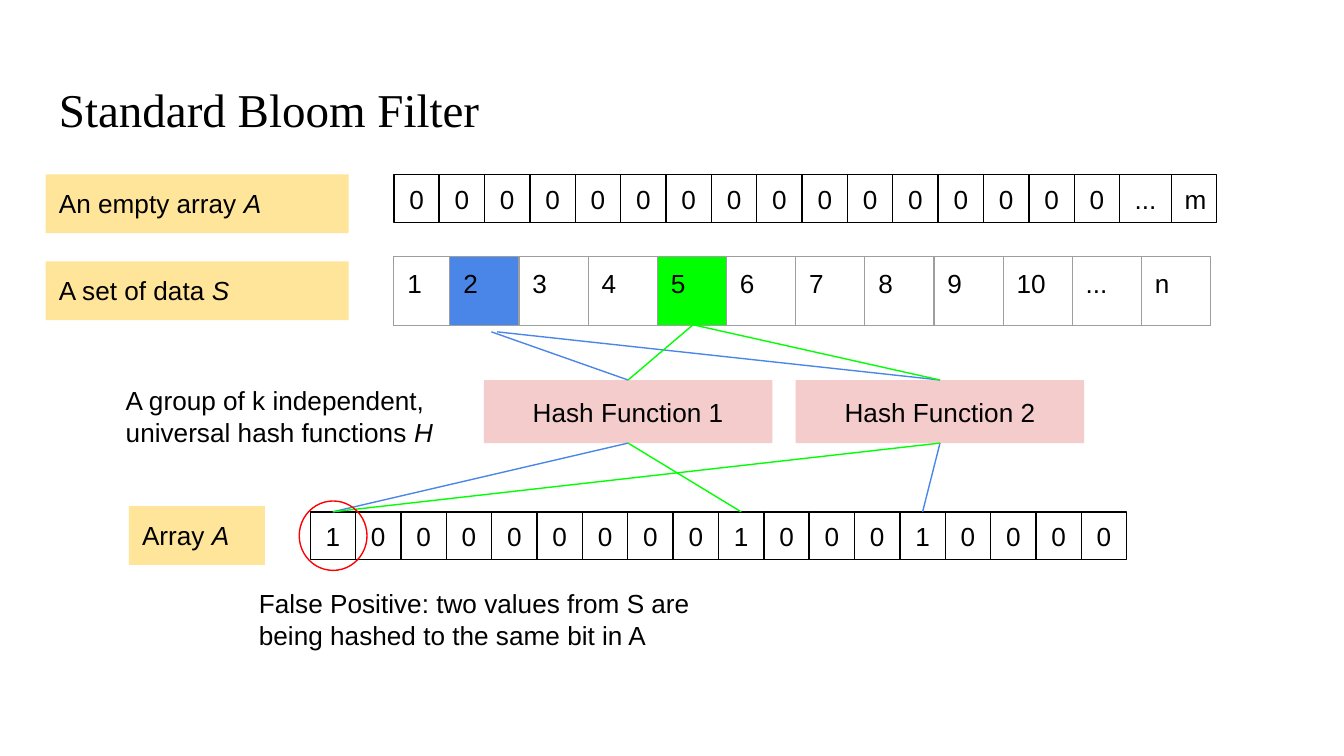
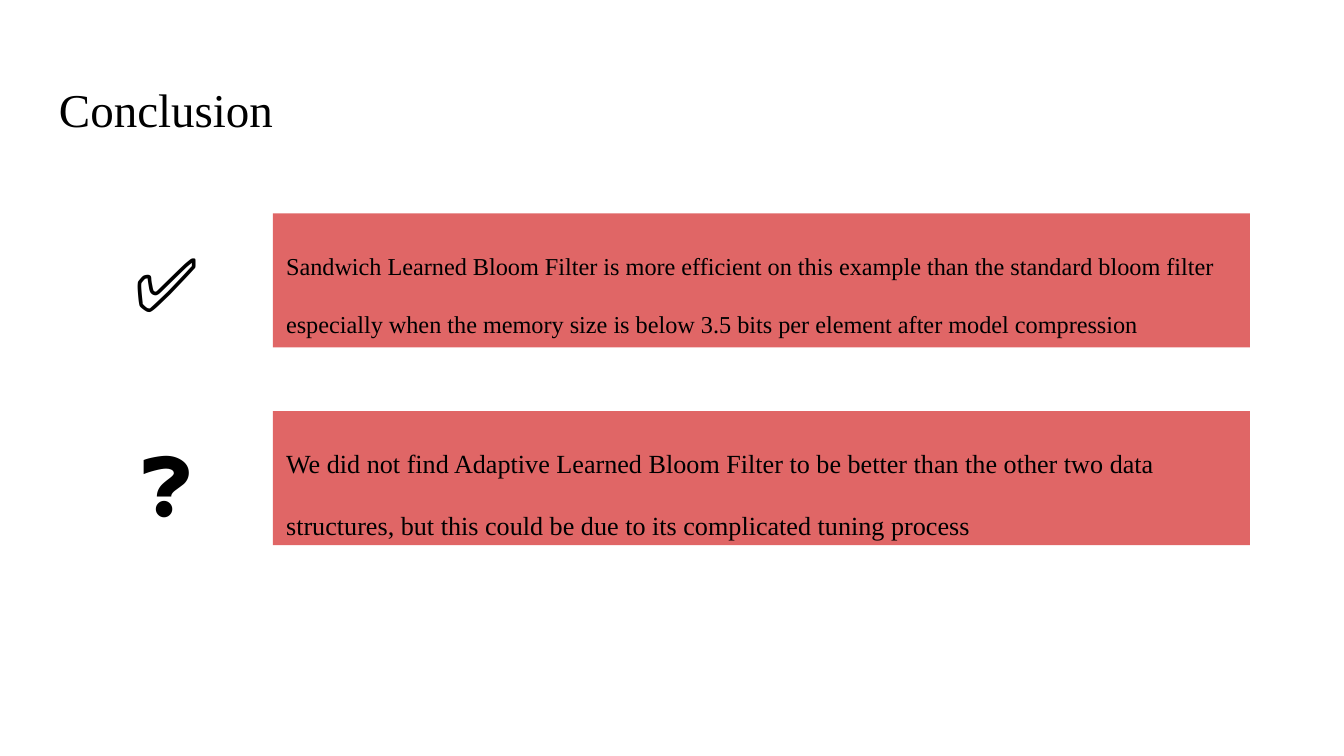
from dataclasses import dataclass
from typing import NamedTuple

from lxml.etree import SubElement
from pptx import Presentation
from pptx.dml.color import RGBColor
from pptx.enum.shapes import MSO_CONNECTOR, MSO_SHAPE
from pptx.enum.text import MSO_ANCHOR, MSO_AUTO_SIZE, PP_ALIGN
from pptx.oxml.ns import qn
from pptx.util import Pt

BLACK, GREY, RED = "000000", "9E9E9E", "FF0000"
BLUE, GREEN = "4A86E8", "00FF00"
YELLOW, PINK, CORAL = "FFE599", "F4CCCC", "E06666"
SANS, SERIF = "Arial", "Times New Roman"
LINE_WIDTH = 0.75
INSET = 7.2
LEFT = 24.5
BIT_W, BIT_H = 24.3, 25.7
TOP_BOTTOM = 0, 2


@dataclass
class Box:
    """A rectangular area with optional fill and outline, in points."""
    x: float
    y: float
    w: float
    h: float
    fill: str | None = None
    line: str | None = None
    preset: MSO_SHAPE | None = MSO_SHAPE.RECTANGLE


@dataclass
class Label:
    """A left-aligned note whose last word may be italic."""
    box: Box
    text: str
    symbol: str = ""


@dataclass
class Finding:
    """One conclusion with its icon."""
    y: float
    icon: str
    text: str
    size: float
    after: float = 0


class Point(NamedTuple):
    """A free line end, in points."""
    x: float
    y: float


class Site(NamedTuple):
    """A line end joined to a shape."""
    shape: object
    index: int


def rgb(color: str) -> RGBColor:
    """Turn a hex string into a colour."""
    return RGBColor.from_string(color)


def write(tf, text: str, *, italic: str = "", size: float = 14, font: str = SANS,
          color: str = BLACK, align=PP_ALIGN.LEFT, anchor=MSO_ANCHOR.TOP,
          spacing: float | None = None, after: float = 0, grow: bool = False) -> None:
    """Fill a text frame with one formatted paragraph."""
    tf.word_wrap = True
    tf.vertical_anchor = anchor
    tf.margin_left = tf.margin_right = tf.margin_top = tf.margin_bottom = Pt(INSET)
    if grow:
        tf.auto_size = MSO_AUTO_SIZE.SHAPE_TO_FIT_TEXT
    p = tf.paragraphs[0]
    p.alignment = align
    if spacing:
        p.line_spacing = spacing
    if after:
        p.space_after = Pt(after)
    for part, slanted in ((text, False), (italic, True)):
        if part:
            r = p.add_run()
            r.text = part
            r.font.size, r.font.name = Pt(size), font
            r.font.color.rgb = rgb(color)
            r.font.italic = slanted


def draw(s, box: Box):
    """Draw a box as a preset shape, or as a text box when it has no preset."""
    area = [Pt(v) for v in (box.x, box.y, box.w, box.h)]
    if box.preset is None:
        return s.shapes.add_textbox(*area)
    sp = s.shapes.add_shape(box.preset, *area)
    sp.shadow.inherit = False
    if box.fill:
        sp.fill.solid()
        sp.fill.fore_color.rgb = rgb(box.fill)
    else:
        sp.fill.background()
    if box.line:
        sp.line.color.rgb = rgb(box.line)
        sp.line.width = Pt(LINE_WIDTH)
    else:
        sp.line.fill.background()
    return sp


def add_title(prs, text: str):
    """Add a blank slide with a title."""
    s = prs.slides.add_slide(prs.slide_layouts[6])
    sp = draw(s, Box(LEFT, 35.3, 671, 45.4, preset=None))
    write(sp.text_frame, text, size=25.2, font=SERIF, anchor=MSO_ANCHOR.MIDDLE)
    return s


def add_centred(s, box: Box, text: str):
    """Draw a box with text in its centre."""
    sp = draw(s, box)
    write(sp.text_frame, text, align=PP_ALIGN.CENTER, anchor=MSO_ANCHOR.MIDDLE)
    return sp


def add_bits(s, x: float, y: float, bits: list[str]) -> list:
    """Draw a row of bit cells."""
    cells = []
    for bit in bits:
        w = 27.7 if bit == "..." else BIT_W
        cells.append(add_centred(s, Box(x, y, w, BIT_H, line=BLACK), bit))
        x += w
    return cells


def add_label(s, label: Label) -> None:
    """Draw a label that grows with its text."""
    sp = draw(s, label.box)
    write(sp.text_frame, label.text, italic=label.symbol, grow=True)


def add_border(cell) -> None:
    """Outline a table cell on all four sides."""
    tcPr = cell._tc.get_or_add_tcPr()
    for i, side in enumerate(("a:lnL", "a:lnR", "a:lnT", "a:lnB")):
        ln = tcPr.makeelement(qn(side), {"w": str(Pt(LINE_WIDTH))})
        SubElement(SubElement(ln, qn("a:solidFill")), qn("a:srgbClr"), val=GREY)
        tcPr.insert(i, ln)


def add_data_set(s, values: list[str], fills: dict[str, str]) -> None:
    """Draw the data set as a one-row table."""
    widths = [30] + [37.07] * (len(values) - 1)
    table = s.shapes.add_table(1, len(values), Pt(211), Pt(137.4),
                               Pt(sum(widths)), Pt(37)).table
    table.first_row = table.horz_banding = False
    for i, (value, width) in enumerate(zip(values, widths)):
        table.columns[i].width = Pt(width)
        cell = table.cell(0, i)
        if value in fills:
            cell.fill.solid()
            cell.fill.fore_color.rgb = rgb(fills[value])
        else:
            cell.fill.background()
        cell.margin_left = cell.margin_right = Pt(INSET)
        cell.margin_top = cell.margin_bottom = Pt(INSET)
        write(cell.text_frame, value)
        add_border(cell)


def add_link(s, start: Point | Site, end: Site, color: str) -> None:
    """Draw a straight line from a point or shape to a shape."""
    x, y = start if isinstance(start, Point) else (0, 0)
    cn = s.shapes.add_connector(MSO_CONNECTOR.STRAIGHT, Pt(x), Pt(y), Pt(x), Pt(y))
    if isinstance(start, Site):
        cn.begin_connect(*start)
    cn.end_connect(*end)
    cn.line.color.rgb = rgb(color)
    cn.line.width = Pt(LINE_WIDTH)
    SubElement(cn._element.spPr, qn("a:effectLst"))


def build_filter(prs) -> None:
    """Build the slide on the standard Bloom filter."""
    s = add_title(prs, "Standard Bloom Filter")
    add_bits(s, 211, 93.6, ["0"] * 16 + ["...", "m"])
    labels = [
        Label(Box(LEFT, 93.4, 162.3, 31.5, YELLOW), "An empty array ", "A"),
        Label(Box(LEFT, 140, 162.3, 31.5, YELLOW), "A set of data ", "S"),
        Label(Box(69, 271.2, 73, 31.5, YELLOW), "Array ", "A"),
        Label(Box(60.3, 199, 188, 48, preset=None),
              "A group of k independent, universal hash functions ", "H"),
        Label(Box(131.6, 307.6, 248.4, 48, preset=None),
              "False Positive: two values from S are being hashed to the same bit in A"),
    ]
    for label in labels:
        add_label(s, label)
    hash_1, hash_2 = [
        add_centred(s, Box(259.2 + 167.1 * i, 203.6, 154.6, 33.8, PINK),
                    f"Hash Function {i + 1}")
        for i in range(2)
    ]
    values = [str(n) for n in range(1, 11)] + ["...", "n"]
    add_data_set(s, values, {"2": BLUE, "5": GREEN})
    set_bits = (0, 9, 13)
    bits = add_bits(s, 166.2, 274.2, ["1" if i in set_bits else "0" for i in range(18)])
    top, bottom = TOP_BOTTOM
    five = Point(371.3, 174)
    links = [
        (Point(263.3, 177.8), Site(hash_1, top), BLUE),
        (Site(hash_1, bottom), Site(bits[0], top), BLUE),
        (Point(266.4, 177.8), Site(hash_2, top), BLUE),
        (Site(hash_2, bottom), Site(bits[13], top), BLUE),
        (Site(hash_2, bottom), Site(bits[0], top), GREEN),
        (five, Site(hash_2, top), GREEN),
        (five, Site(hash_1, top), GREEN),
        (Site(hash_1, bottom), Site(bits[9], top), GREEN),
    ]
    for start, end, color in links:
        add_link(s, start, end, color)
    draw(s, Box(160.3, 268.4, 36.3, 37.2, line=RED, preset=MSO_SHAPE.OVAL))


def build_conclusion(prs) -> None:
    """Build the closing slide."""
    s = add_title(prs, "Conclusion")
    findings = [
        Finding(114.3, "✅", "Sandwich Learned Bloom Filter is more efficient on this example "
                "than the standard bloom filter especially when the memory size is below "
                "3.5 bits per element after model compression", 13),
        Finding(220.3, "❓", "We did not find Adaptive Learned Bloom Filter to be better than "
                "the other two data structures, but this could be due to its complicated "
                "tuning process", 14, 12),
    ]
    for f in findings:
        sp = draw(s, Box(146.2, f.y, 523.4, 71.8, CORAL))
        write(sp.text_frame, f.text, size=f.size, font=SERIF, spacing=2.0,
              after=f.after, anchor=MSO_ANCHOR.MIDDLE)
        icon = draw(s, Box(55, f.y + 5.5, 69, 63.4, preset=None))
        write(icon.text_frame, f.icon, size=40, font=SERIF,
              align=PP_ALIGN.CENTER, grow=True)


def main() -> None:
    """Build and save the presentation."""
    prs = Presentation()
    prs.slide_width, prs.slide_height = Pt(720), Pt(405)
    build_filter(prs)
    build_conclusion(prs)
    prs.save("out.pptx")


if __name__ == "__main__":
    main()
